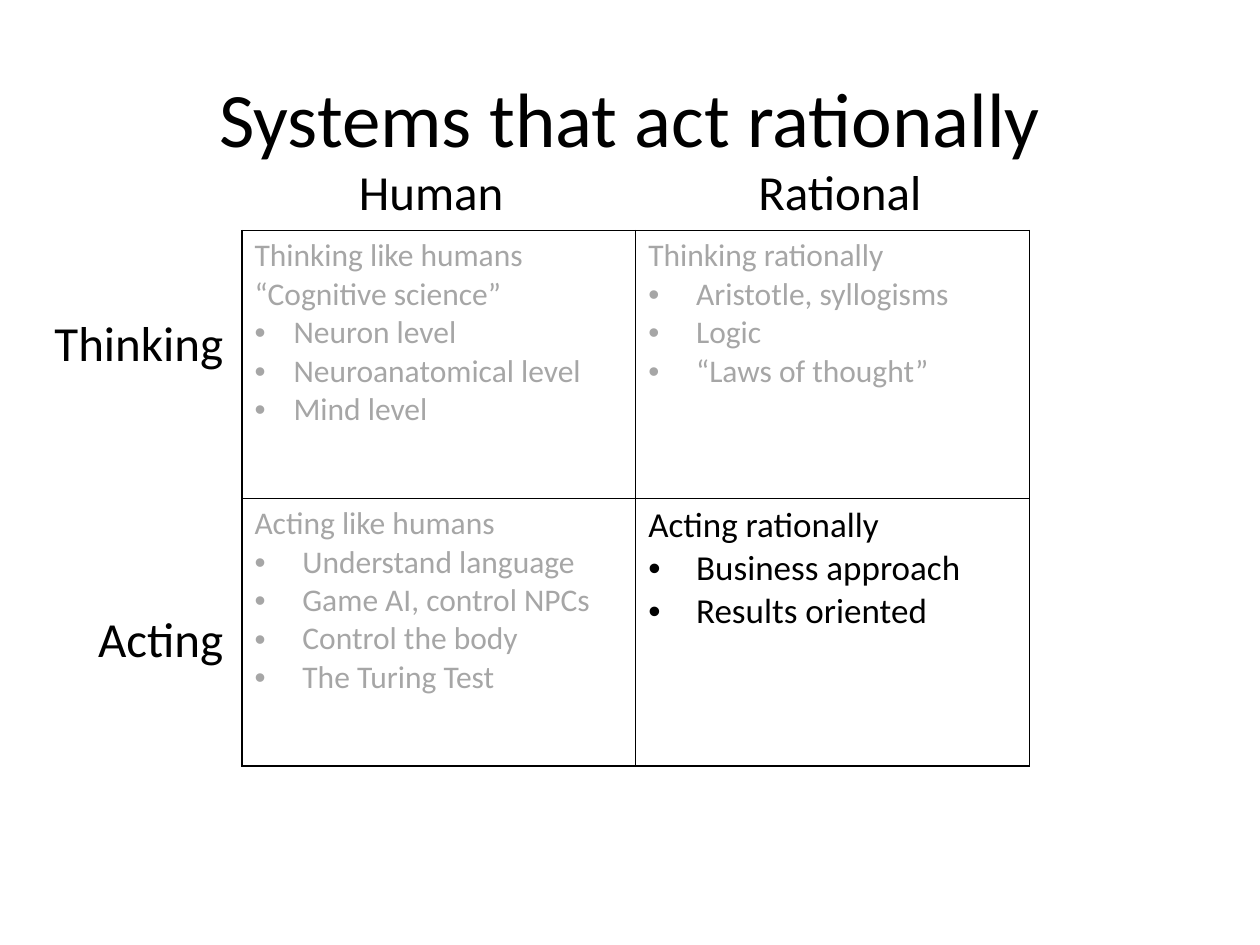
from dataclasses import dataclass

from lxml import etree
from pptx import Presentation
from pptx.dml.color import RGBColor
from pptx.enum import text as t
from pptx.oxml import ns
from pptx.util import Inches, Pt


@dataclass(frozen=True)
class Theme:
    face: str = "Calibri"
    ink: str = "000000"
    faded: str = "A6A6A6"
    paper: str = "FFFFFF"
    title: int = 44
    label: int = 28
    strong: int = 20
    body: int = 18
    line: int = 1


THEME = Theme()

# Each cell: plain lines, bulleted lines, hanging indent, highlighted
CELLS = [
    [
        (["Thinking like humans", "“Cognitive science”"],
         ["Neuron level", "Neuroanatomical level", "Mind level"], 0.31, False),
        (["Thinking rationally"],
         ["Aristotle, syllogisms", "Logic", "“Laws of thought”"], 0.38, False),
    ],
    [
        (["Acting like humans"],
         ["Understand language", "Game AI, control NPCs", "Control the body",
          "The Turing Test"], 0.38, False),
        (["Acting rationally"],
         ["Business approach", "Results oriented"], 0.38, True),
    ],
]


def style(para, size, color=THEME.ink):
    para.font.name = THEME.face
    para.font.size = Pt(size)
    para.font.color.rgb = RGBColor.from_string(color)


def add_title(slide, words):
    title = slide.shapes.title
    title.left, title.top = Inches(0.5), Inches(0.3)
    title.width, title.height = Inches(9), Inches(1.25)
    frame = title.text_frame
    frame.text = words
    frame.vertical_anchor = t.MSO_ANCHOR.MIDDLE
    para = frame.paragraphs[0]
    para.alignment = t.PP_ALIGN.CENTER
    style(para, THEME.title)


def add_label(slide, words, left, top, align):
    box = slide.shapes.add_textbox(
        Inches(left), Inches(top), Inches(1.56), Inches(0.57))
    frame = box.text_frame
    frame.word_wrap = True
    frame.text = words
    para = frame.paragraphs[0]
    para.alignment = align
    style(para, THEME.label)


def add_bullet(para, indent):
    """Give the paragraph a bullet with a hanging indent, in inches."""
    props = para._p.get_or_add_pPr()
    props.set("marL", str(Inches(indent)))
    props.set("indent", str(-Inches(indent)))
    etree.SubElement(props, ns.qn("a:buFont"), typeface="Arial")
    etree.SubElement(props, ns.qn("a:buChar"), char="•")


def add_borders(cell):
    props = cell._tc.get_or_add_tcPr()
    for i, side in enumerate("LRTB"):
        line = etree.Element(ns.qn(f"a:ln{side}"), w=str(Pt(THEME.line)))
        fill = etree.SubElement(line, ns.qn("a:solidFill"))
        etree.SubElement(fill, ns.qn("a:srgbClr"), val=THEME.ink)
        props.insert(i, line)


def fill_cell(cell, plain, bullets, indent, strong):
    cell.fill.solid()
    cell.fill.fore_color.rgb = RGBColor.from_string(THEME.paper)
    add_borders(cell)
    size = THEME.strong if strong else THEME.body
    color = THEME.ink if strong else THEME.faded
    frame = cell.text_frame
    frame.text = "\n".join(plain + bullets)
    for i, para in enumerate(frame.paragraphs):
        if i >= len(plain):
            add_bullet(para, indent)
        style(para, size, color)


def add_grid(slide, rows):
    table = slide.shapes.add_table(
        len(rows), len(rows[0]), Inches(1.92), Inches(1.83),
        Inches(6.25), Inches(4.25)).table
    table.first_row = table.horz_banding = False
    for r, row in enumerate(rows):
        for c, content in enumerate(row):
            fill_cell(table.cell(r, c), *content)


def main():
    deck = Presentation()
    deck.slide_width, deck.slide_height = Inches(10), Inches(7.5)
    slide = deck.slides.add_slide(deck.slide_layouts.get_by_name("Title Only"))
    add_title(slide, "Systems that act rationally")
    add_grid(slide, CELLS)
    for words, left in (("Human", 2.75), ("Rational", 5.92)):
        add_label(slide, words, left, 1.23, t.PP_ALIGN.LEFT)
    for words, top in (("Thinking", 2.43), ("Acting", 4.78)):
        add_label(slide, words, 0.31, top, t.PP_ALIGN.RIGHT)
    deck.save("out.pptx")


if __name__ == "__main__":
    main()
